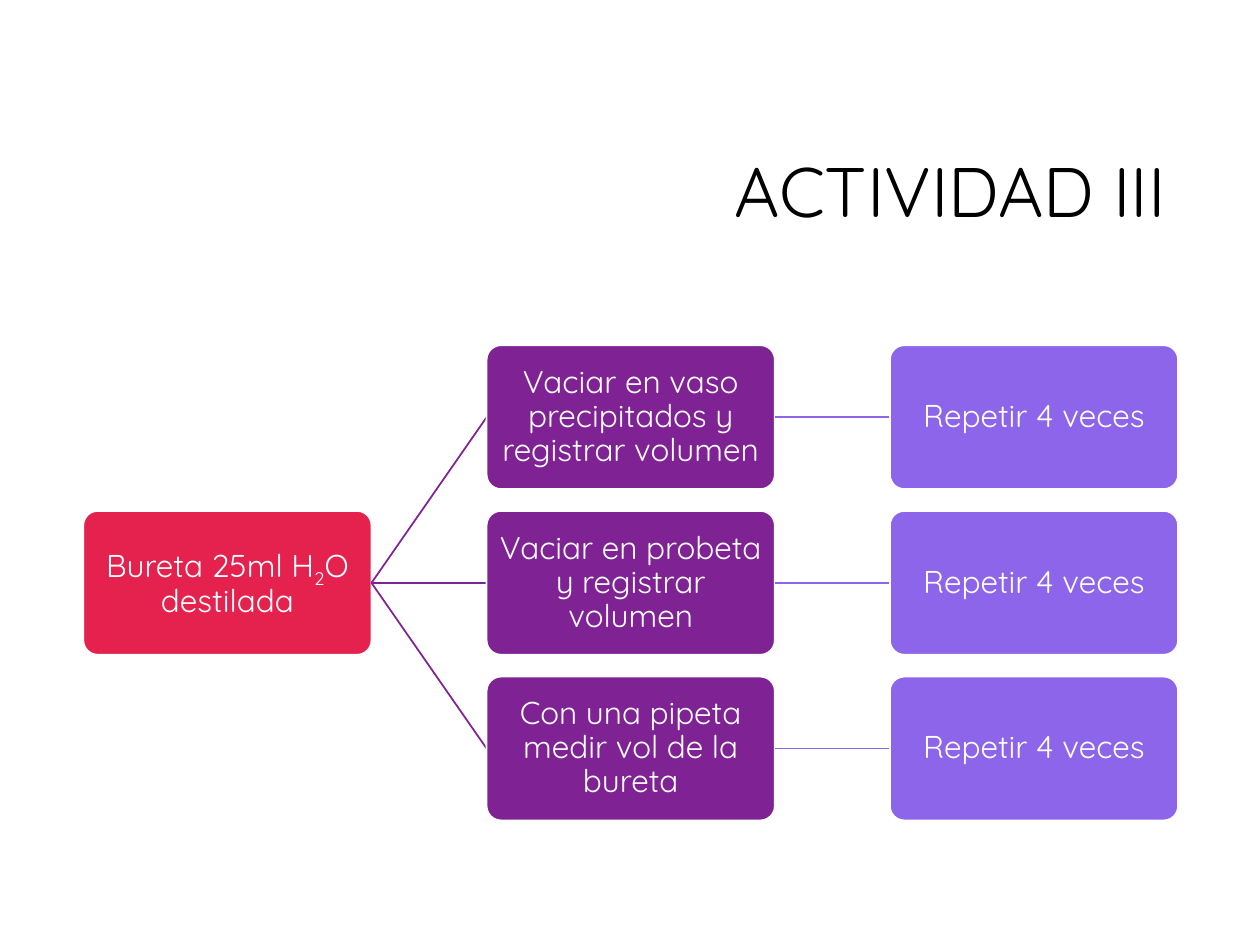
from dataclasses import dataclass

from lxml import etree
from pptx import Presentation
from pptx.dml.color import RGBColor
from pptx.enum.shapes import MSO_CONNECTOR, MSO_SHAPE
from pptx.enum.text import MSO_ANCHOR, PP_ALIGN
from pptx.oxml.ns import qn
from pptx.shapes.autoshape import Shape
from pptx.slide import Slide
from pptx.text.text import TextFrame
from pptx.util import Cm, Pt

ROUNDED = MSO_SHAPE.ROUNDED_RECTANGLE
STRAIGHT = MSO_CONNECTOR.STRAIGHT
MIDDLE = MSO_ANCHOR.MIDDLE
CENTER, RIGHT = PP_ALIGN.CENTER, PP_ALIGN.RIGHT
LEFT_SITE, RIGHT_SITE = 1, 3


@dataclass(frozen=True)
class Theme:
    font: str = "Quicksand"
    title_size: int = 40
    box_size: int = 18
    line_width: float = 1
    black: str = "000000"
    white: str = "FFFFFF"
    level_fills: tuple[str, ...] = ("E5224E", "7F2294", "8D65EA")


@dataclass(frozen=True)
class Run:
    text: str
    subscript: bool = False


@dataclass(frozen=True)
class Node:
    runs: tuple[Run, ...]
    level: int
    row: int


THEME = Theme()

# Grid of boxes, in centimetres
GRID_LEFT, GRID_TOP = 1.68, 6.96
COL_STEP, ROW_STEP = 8.13, 3.34
BOX_W, BOX_H = 5.81, 2.9
INSET = 0.03

# Tree content
ROOT = Node((Run("Bureta 25ml H"), Run("2", True), Run("O destilada")), 0, 1)
STEPS = (
    "Vaciar en vaso precipitados y registrar volumen",
    "Vaciar en probeta y registrar volumen",
    "Con una pipeta medir vol de la bureta",
)
REPEAT = "Repetir 4 veces"


def write(tf: TextFrame, runs: tuple[Run, ...], size: int, color: str,
          align: PP_ALIGN) -> None:
    tf.word_wrap = True
    tf.vertical_anchor = MIDDLE
    p = tf.paragraphs[0]
    p.alignment = align
    p.line_spacing = 0.9
    for run in runs:
        r = p.add_run()
        r.text = run.text
        r.font.name = THEME.font
        r.font.size = Pt(size)
        r.font.color.rgb = RGBColor.from_string(color)
        if run.subscript:
            r.font._element.set("baseline", "-25000")


def draw_node(s: Slide, node: Node) -> Shape:
    sp = s.shapes.add_shape(
        ROUNDED,
        Cm(GRID_LEFT + node.level * COL_STEP),
        Cm(GRID_TOP + node.row * ROW_STEP),
        Cm(BOX_W), Cm(BOX_H))
    sp.adjustments[0] = 0.1
    sp.shadow.inherit = False
    sp.fill.solid()
    sp.fill.fore_color.rgb = RGBColor.from_string(THEME.level_fills[node.level])
    sp.line.color.rgb = RGBColor.from_string(THEME.white)
    sp.line.width = Pt(THEME.line_width)
    tf = sp.text_frame
    tf.margin_left = tf.margin_right = Cm(INSET)
    tf.margin_top = tf.margin_bottom = Cm(INSET)
    write(tf, node.runs, THEME.box_size, THEME.white, CENTER)
    return sp


def draw_child(s: Slide, parent: Shape, node: Node) -> Shape:
    # The link is added first so that it lies under the child's outline
    link = s.shapes.add_connector(STRAIGHT, 0, 0, 0, 0)
    link.line.color.rgb = RGBColor.from_string(THEME.level_fills[node.level])
    link.line.width = Pt(THEME.line_width)
    etree.SubElement(link._element.spPr, qn("a:effectLst"))
    child = draw_node(s, node)
    link.begin_connect(parent, RIGHT_SITE)
    link.end_connect(child, LEFT_SITE)
    return child


def main() -> None:
    prs = Presentation()
    prs.slide_width, prs.slide_height = Cm(25.4), Cm(19.05)
    s = prs.slides.add_slide(prs.slide_layouts[6])

    # Title
    title = s.shapes.add_textbox(Cm(6.05), Cm(2.13), Cm(17.7), Cm(3.58))
    write(title.text_frame, (Run("ACTIVIDAD III"),), THEME.title_size,
          THEME.black, RIGHT)

    # Tree, from left to right
    root = draw_node(s, ROOT)
    for row, text in enumerate(STEPS):
        step = draw_child(s, root, Node((Run(text),), 1, row))
        draw_child(s, step, Node((Run(REPEAT),), 2, row))

    prs.save("out.pptx")


if __name__ == "__main__":
    main()
